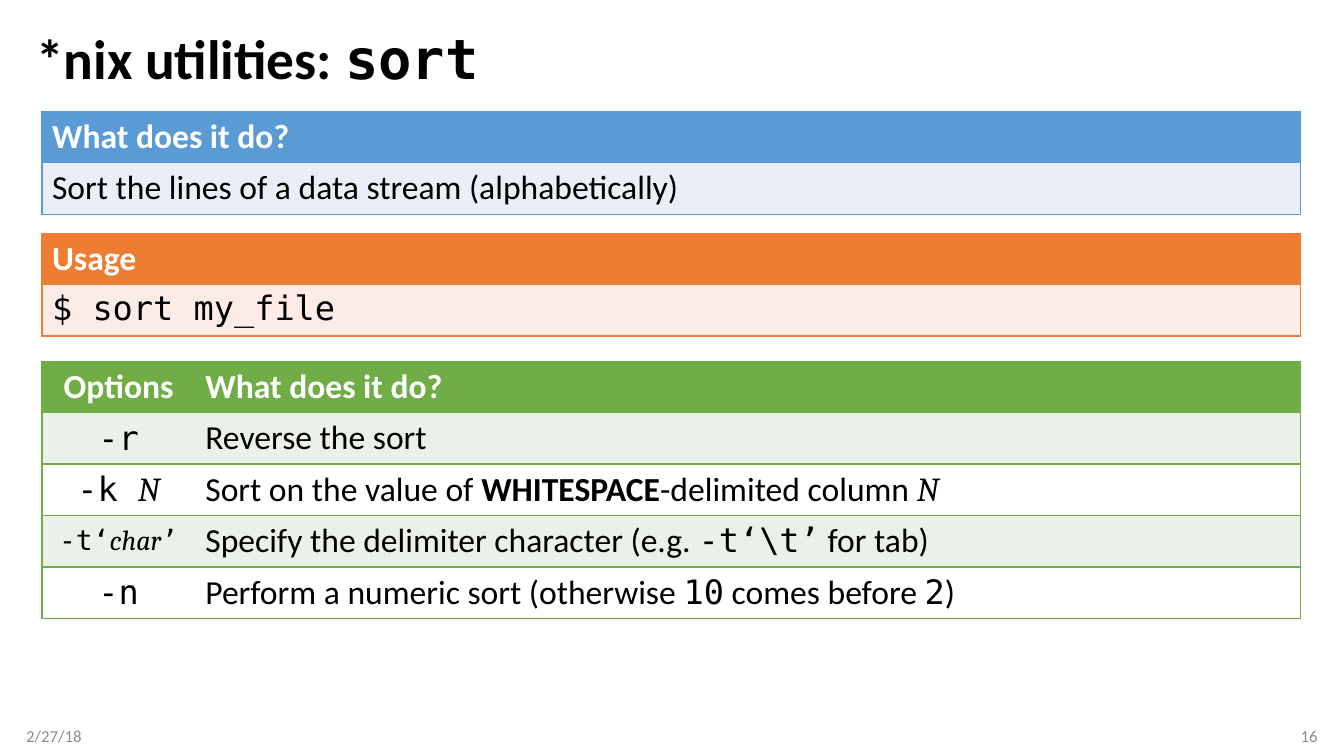
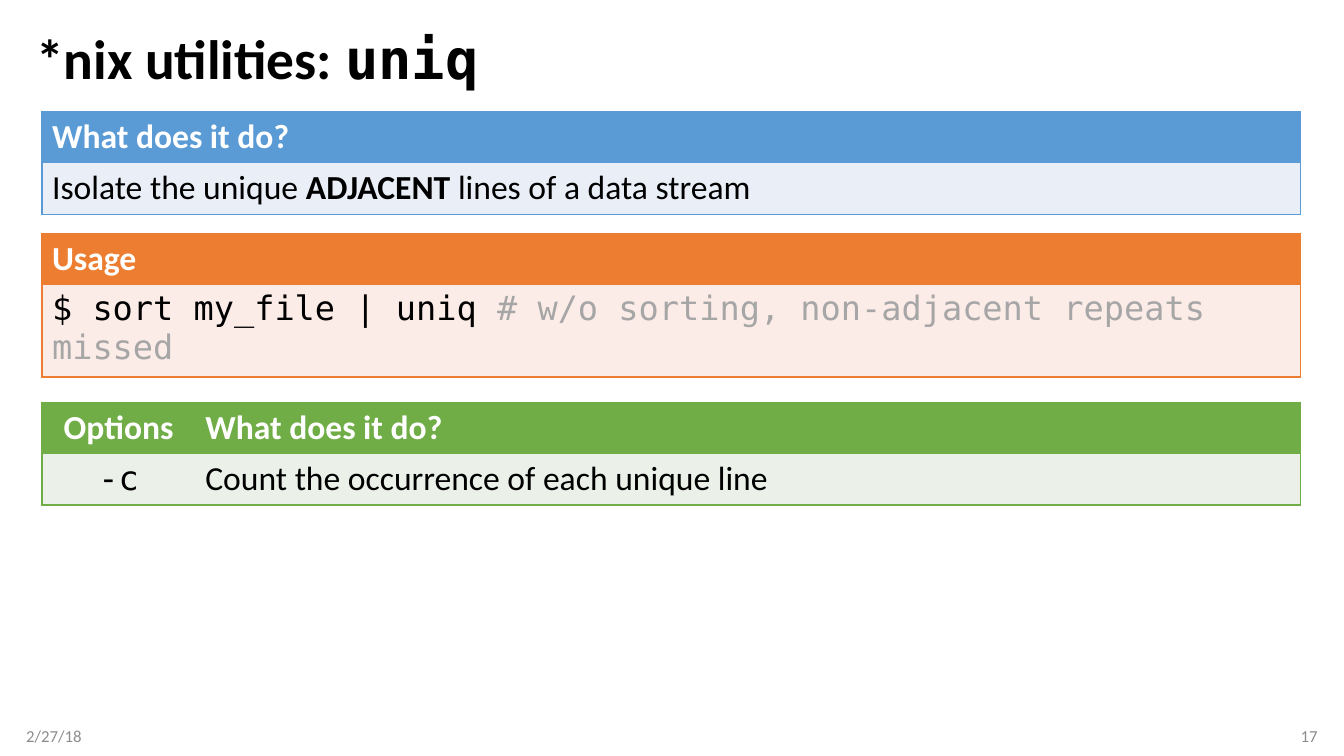
from dataclasses import dataclass

from lxml.etree import SubElement
from pptx import Presentation
from pptx.dml.color import RGBColor
from pptx.enum.text import MSO_ANCHOR, MSO_AUTO_SIZE, PP_ALIGN
from pptx.oxml.ns import qn
from pptx.util import Pt

PX = 9525  # EMU per px, 96 px to the inch


@dataclass(frozen=True)
class Theme:
    text: str = "000000"
    header_text: str = "FFFFFF"
    footer_text: str = "8C8C8C"
    comment: str = "A6A6A6"
    blue: tuple = ("5B9BD5", "EAEFF7")
    orange: tuple = ("ED7D31", "FCECE8")
    green: tuple = ("70AD47", "EBF1E9")
    plain: str = "FFFFFF"
    sans: str = "Calibri"
    mono: str = "DejaVu Sans Mono"
    math: str = "Cambria"
    title_size: float = 39.6
    table_size: int = 24
    small_size: int = 20
    footer_size: int = 12


T = Theme()
NO_STYLE = "{2D5ABB26-0587-4C30-8999-92F81FD0307C}"
LEFT, WIDTH = 40, 1199
ROW, EXTRA_LINE = 49, 39  # a one-line row, and each further line of text in it
OPTION_COLS = (146, WIDTH - 146)
MARGIN, FOOTER_W = 25, 288

# Run styles: whatever differs from the surrounding text
SANS = {}
BOLD = {"bold": True}
MONO = {"font": T.mono}
MATH = {"font": T.math, "italic": True}
COMMENT = {"font": T.mono, "color": T.comment}
SMALL_MONO = {**MONO, "size": T.small_size}
SMALL_MATH = {**MATH, "size": T.small_size}


def add_runs(p, runs, size, color, bold=False):
    for text, style in runs:
        r = p.add_run()
        r.text = text
        f = r.font
        f.name = style.get("font", T.sans)
        f.size = Pt(style.get("size", size))
        f.bold = style.get("bold", bold)
        f.italic = style.get("italic", False)
        f.color.rgb = RGBColor.from_string(style.get("color", color))


def add_panel(slide, top, colors, cols, rows, anchor, extra=0):
    """Table with a solid header and banded rows; extra px go to the last row."""
    accent, band = colors
    frame = slide.shapes.add_table(len(rows), len(cols), LEFT * PX, top * PX,
                                   WIDTH * PX, (len(rows) * ROW + extra) * PX)
    table = frame.table
    table._tbl.tblPr.find(qn("a:tableStyleId")).text = NO_STYLE
    for column, width in zip(table.columns, cols):
        column.width = width * PX
    for i, row in enumerate(rows):
        table.rows[i].height = (ROW + extra * (i == len(rows) - 1)) * PX
        for j, runs in enumerate(row):
            cell = table.cell(i, j)
            sides = ["a:lnL"] * (j == 0) + ["a:lnR"] * (j == len(cols) - 1)
            for side in sides + ["a:lnT", "a:lnB"]:
                ln = SubElement(cell._tc.get_or_add_tcPr(), qn(side), w=str(Pt(1)))
                SubElement(SubElement(ln, qn("a:solidFill")), qn("a:srgbClr"), val=accent)
            cell.fill.solid()
            fill = accent if i == 0 else band if i % 2 else T.plain
            cell.fill.fore_color.rgb = RGBColor.from_string(fill)
            cell.vertical_anchor = anchor
            p = cell.text_frame.paragraphs[0]
            if j < len(cols) - 1:
                p.alignment = PP_ALIGN.CENTER
            add_runs(p, runs, T.table_size, T.text if i else T.header_text, i == 0)


utilities = [
    {
        "name": "sort",
        "purpose": [("Sort the lines of a data stream (alphabetically)", SANS)],
        "usage": [("$ sort my_file", MONO)],
        "usage_lines": 1,
        "options": [
            ([("-r", MONO)], [("Reverse the sort", SANS)]),
            ([("-k ", MONO), ("N", MATH)],
             [("Sort on the value of ", SANS), ("WHITESPACE", BOLD),
              ("-delimited column ", SANS), ("N", MATH)]),
            ([("-t‘", SMALL_MONO), ("char", SMALL_MATH), ("’ ", SMALL_MONO)],
             [("Specify the delimiter character (e.g. ", SANS), ("-t‘\\t’", MONO),
              (" for tab)", SANS)]),
            ([("-n", MONO)],
             [("Perform a numeric sort (otherwise ", SANS), ("10", MONO),
              (" comes before ", SANS), ("2", MONO), (")", SANS)]),
        ],
    },
    {
        "name": "uniq",
        "purpose": [("Isolate the unique ", SANS), ("ADJACENT", BOLD),
                    (" lines of a data stream", SANS)],
        "usage": [("$ sort my_file | uniq ", MONO),
                  ("# w/o sorting, non-adjacent repeats missed", COMMENT)],
        "usage_lines": 2,
        "options": [
            ([("-c", MONO)], [("Count the occurrence of each unique line", SANS)]),
        ],
    },
]

prs = Presentation()
prs.slide_width, prs.slide_height = 1280 * PX, 720 * PX

for number, utility in enumerate(utilities, start=16):
    slide = prs.slides.add_slide(prs.slide_layouts[5])

    title = slide.shapes.title
    title.left, title.top = MARGIN * PX, 24 * PX
    title.width, title.height = 1230 * PX, 69 * PX
    tf = title.text_frame
    tf.auto_size = MSO_AUTO_SIZE.NONE
    tf.vertical_anchor = MSO_ANCHOR.MIDDLE
    p = tf.paragraphs[0]
    p.alignment, p.line_spacing = PP_ALIGN.LEFT, 0.9
    add_runs(p, [("*nix utilities: ", SANS), (utility["name"], MONO)],
             T.title_size, T.text, bold=True)

    footers = [("2/27/18", MARGIN, PP_ALIGN.LEFT),
               (str(number), 1280 - MARGIN - FOOTER_W, PP_ALIGN.RIGHT)]
    for text, left, align in footers:
        tf = slide.shapes.add_textbox(left * PX, 682 * PX, FOOTER_W * PX, 38 * PX).text_frame
        tf.word_wrap = True
        tf.margin_left = tf.margin_right = 0
        tf.vertical_anchor = MSO_ANCHOR.MIDDLE
        p = tf.paragraphs[0]
        p.alignment = align
        add_runs(p, [(text, SANS)], T.footer_size, T.footer_text)

    question = [("What does it do?", SANS)]
    extra = (utility["usage_lines"] - 1) * EXTRA_LINE
    add_panel(slide, 106, T.blue, [WIDTH],
              [[question], [utility["purpose"]]], MSO_ANCHOR.TOP)
    add_panel(slide, 222, T.orange, [WIDTH],
              [[[("Usage", SANS)]], [utility["usage"]]], MSO_ANCHOR.TOP, extra)
    add_panel(slide, 344 + extra, T.green, OPTION_COLS,
              [([("Options", SANS)], question)] + utility["options"], MSO_ANCHOR.MIDDLE)

prs.save("out.pptx")
